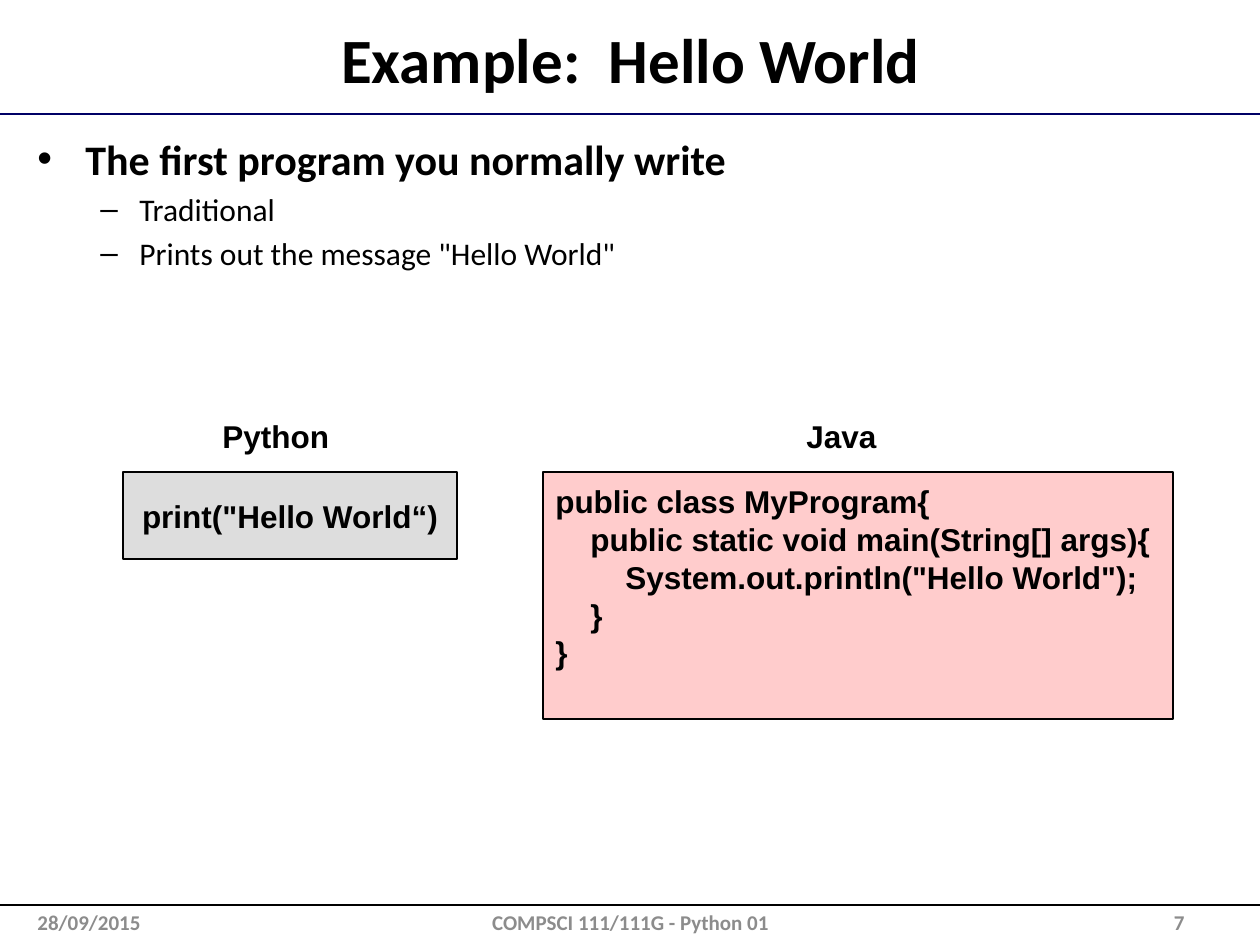
from pptx import Presentation
from pptx.dml.color import RGBColor
from pptx.enum.shapes import MSO_CONNECTOR, MSO_SHAPE
from pptx.enum.text import MSO_ANCHOR, PP_ALIGN
from pptx.oxml.ns import qn
from pptx.util import Pt
from lxml.etree import SubElement

SCALE = 914400 / 126
COLORS = {
    "text": "000000", "navy": "000066", "footer": "8C8C8C",
    "python": "DDDDDD", "java": "FFCCCC", "background": "FFFFFF",
}
CODE_INDENT = 35


def px(n):
    return round(n * SCALE)


def rgb(name):
    return RGBColor.from_string(COLORS[name])


def format_text(tf, size, font, color="text", bold=True,
                align=PP_ALIGN.LEFT, anchor=MSO_ANCHOR.TOP, wrap=True):
    tf.word_wrap = wrap
    tf.vertical_anchor = anchor
    for p in tf.paragraphs:
        p.alignment = align
        for r in p.runs:
            r.font.size = Pt(size)
            r.font.name = font
            r.font.bold = bold
            r.font.color.rgb = rgb(color)


def set_indent(p, left, hanging=0):
    pPr = p._p.get_or_add_pPr()
    pPr.set("marL", str(px(left)))
    pPr.set("indent", str(px(-hanging)))
    return pPr


def add_title(s, text, box):
    sp = s.shapes.title
    sp.left, sp.top, sp.width, sp.height = map(px, box)
    sp.text_frame.text = text
    format_text(sp.text_frame, 36, "Calibri", align=PP_ALIGN.CENTER,
                anchor=MSO_ANCHOR.MIDDLE)


def add_text(s, text, box, size, font, **style):
    sp = s.shapes.add_textbox(*map(px, box))
    sp.text_frame.text = text
    format_text(sp.text_frame, size, font, **style)
    return sp.text_frame


def add_bullets(s, items, box):
    levels = [(24, True, 48, 48, "•"), (18, False, 102, 39, "–")]
    tf = add_text(s, "\n".join(text for _, text in items), box, 24, "Calibri")
    for p, (level, _) in zip(tf.paragraphs, items):
        size, bold, left, hanging, char = levels[level]
        p.level = level
        p.space_before = Pt(size * 0.2)
        for r in p.runs:
            r.font.size = Pt(size)
            r.font.bold = bold
        pPr = set_indent(p, left, hanging)
        SubElement(pPr, qn("a:buFont"), typeface="Arial")
        SubElement(pPr, qn("a:buChar"), char=char)


def add_rule(s, y, color, width):
    line = s.shapes.add_connector(MSO_CONNECTOR.STRAIGHT, 0, px(y), px(1260), px(y))
    line.line.color.rgb = rgb(color)
    line.line.width = Pt(width)
    SubElement(line._element.spPr, qn("a:effectLst"))


def add_code(s, lines, box, fill, align, wrap, bottom=6):
    sp = s.shapes.add_shape(MSO_SHAPE.RECTANGLE, *map(px, box))
    sp.shadow.inherit = False
    sp.fill.solid()
    sp.fill.fore_color.rgb = rgb(fill)
    sp.line.color.rgb = rgb("text")
    sp.line.width = Pt(0.75)
    tf = sp.text_frame
    tf.text = "\n".join(text for _, text in lines)
    tf.margin_bottom = px(bottom)
    format_text(tf, 18, "Arial", align=align, anchor=MSO_ANCHOR.MIDDLE, wrap=wrap)
    for p, (depth, _) in zip(tf.paragraphs, lines):
        set_indent(p, depth * CODE_INDENT)


def main():
    prs = Presentation()
    prs.slide_width, prs.slide_height = px(1260), px(945)
    s = prs.slides.add_slide(prs.slide_layouts[5])
    s.background.fill.solid()
    s.background.fill.fore_color.rgb = rgb("background")

    add_rule(s, 114, "navy", 1)
    add_rule(s, 905, "text", 1)
    add_title(s, "Example:  Hello World", (13, 15, 1235, 87))
    add_bullets(s, [
        (0, "The first program you normally write"),
        (1, "Traditional"),
        (1, 'Prints out the message "Hello World"'),
    ], (25, 127, 1210, 753))

    add_code(s, [(0, 'print("Hello World“)')], (123, 472, 334, 87),
             "python", PP_ALIGN.CENTER, False)
    add_code(s, [
        (0, "public class MyProgram{"),
        (1, "public static void main(String[] args){"),
        (2, 'System.out.println("Hello World");'),
        (1, "}"),
        (0, "}"),
    ], (543, 472, 630, 247), "java", PP_ALIGN.LEFT, True, bottom=44)

    for text, x, width in [("Python", 210, 132), ("Java", 794, 96)]:
        add_text(s, text, (x, 411, width, 50), 18, "Arial", wrap=False)

    for text, x, width, align in [
        ("28/09/2015", 25, 294, PP_ALIGN.LEFT),
        ("COMPSCI 111/111G - Python 01", 431, 399, PP_ALIGN.CENTER),
        ("7", 903, 294, PP_ALIGN.RIGHT),
    ]:
        add_text(s, text, (x, 905, width, 34), 12, "Calibri", color="footer",
                 align=align, anchor=MSO_ANCHOR.MIDDLE)

    prs.save("out.pptx")


if __name__ == "__main__":
    main()
